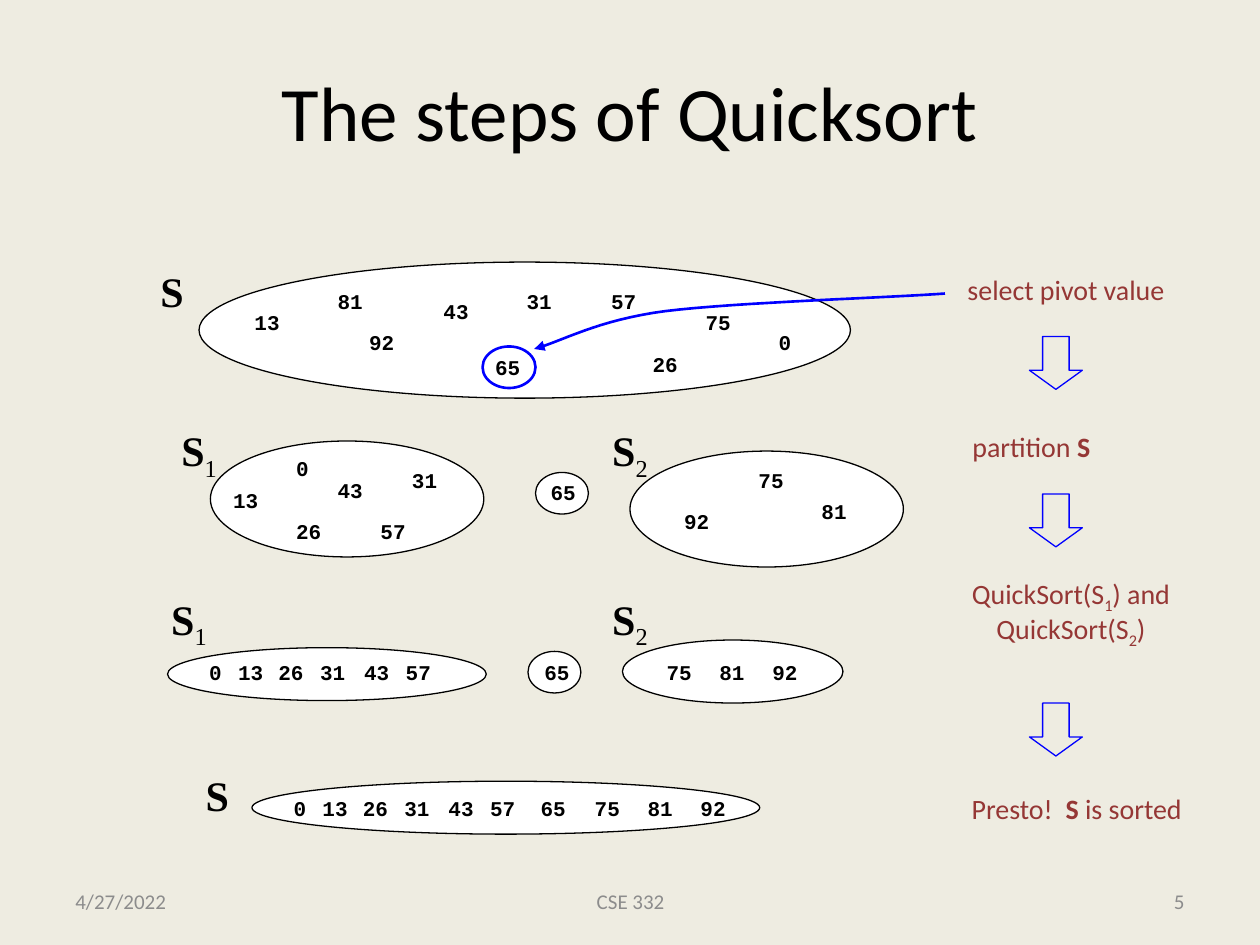
from lxml import etree
from pptx import Presentation
from pptx.dml.color import RGBColor
from pptx.enum.shapes import MSO_SHAPE
from pptx.enum.text import MSO_ANCHOR, MSO_AUTO_SIZE, PP_ALIGN
from pptx.oxml.ns import qn
from pptx.util import Inches, Pt

OVAL, DOWN = MSO_SHAPE.OVAL, MSO_SHAPE.DOWN_ARROW
LEFT, MID, RIGHT = PP_ALIGN.LEFT, PP_ALIGN.CENTER, PP_ALIGN.RIGHT
MIDDLE = MSO_ANCHOR.MIDDLE
GROW = MSO_AUTO_SIZE.SHAPE_TO_FIT_TEXT

PAPER = RGBColor(0xEE, 0xEC, 0xE1)
WHITE = RGBColor(0xFF, 0xFF, 0xFF)
BLACK = RGBColor(0x00, 0x00, 0x00)
BLUE = RGBColor(0x00, 0x00, 0xFF)
RED = RGBColor(0x95, 0x37, 0x35)
GRAY = RGBColor(0x8C, 0x8C, 0x8C)


def write(frame, text, font="Calibri", size=16, color=BLACK, bold=False,
          align=MID, space=None):
    """Fill a frame; | parts runs, a leading _ is subscript, a leading * bold."""
    frame.vertical_anchor = MIDDLE
    for i, line in enumerate(text.split("\n")):
        para = frame.add_paragraph() if i else frame.paragraphs[0]
        para.alignment = align
        para.line_spacing = space
        for part in line.split("|"):
            run = para.add_run()
            run.text = part.lstrip("_*")
            sub = part.startswith("_")
            run.font.name, run.font.size = font, Pt(size)
            run.font.color.rgb = color
            run.font.bold = part.startswith("*") or (bold and not sub)
            if sub:
                run._r.get_or_add_rPr().set("baseline", "-25000")


class Board:
    def __init__(self, slide):
        self.slide = slide
        self.shapes = slide.shapes
        slide.background.fill.solid()
        slide.background.fill.fore_color.rgb = PAPER

    def title(self, text, *box):
        shape = self.shapes.title
        shape.left, shape.top, shape.width, shape.height = map(Inches, box)
        write(shape.text_frame, text, size=44)

    def style(self, shape, fill, color, width):
        shape.shadow.inherit = False
        if fill is None:
            shape.fill.background()
        else:
            shape.fill.solid()
            shape.fill.fore_color.rgb = fill
        shape.line.color.rgb = color
        shape.line.width = Pt(width)

    def oval(self, *box, fill=WHITE, color=BLACK, width=0.75):
        shape = self.shapes.add_shape(OVAL, *map(Inches, box))
        self.style(shape, fill, color, width)

    def arrow(self, x, y):
        shape = self.shapes.add_shape(DOWN, *map(Inches, (x, y, 0.42, 0.42)))
        shape.adjustments[0], shape.adjustments[1] = 0.5, 0.36
        self.style(shape, None, BLUE, 0.75)

    def curve(self, start, *bends, steps=16):
        """Trace cubic bends from start and end in an arrowhead."""
        spots, last = [], start
        for bend in bends:
            ends = (last, *bend)
            for i in range(1, steps + 1):
                t = i / steps
                u = 1 - t
                mix = (u ** 3, 3 * u * u * t, 3 * u * t * t, t ** 3)
                spots.append([Inches(sum(m * p[k] for m, p in zip(mix, ends)))
                              for k in (0, 1)])
            last = bend[-1]
        path = self.shapes.build_freeform(*map(Inches, start))
        path.add_line_segments(spots, close=False)
        shape = path.convert_to_shape()
        self.style(shape, None, BLUE, 1.5)
        line = shape.line._get_or_add_ln()
        etree.SubElement(line, qn("a:tailEnd"), type="triangle")

    def text(self, text, *box, grow=True, **form):
        frame = self.shapes.add_textbox(*map(Inches, box)).text_frame
        frame.word_wrap = not grow
        if grow:
            frame.auto_size = GROW
            form["space"] = 0.9
        write(frame, text, **form)

    def number(self, value, x, y):
        text = str(value)
        self.text(text, x, y, 0.2 + 0.1 * len(text), 0.3,
                  font="Courier New", size=12, bold=True)

    def label(self, text, x, y):
        self.text(text, x, y, 0.5 if "_" in text else 0.39, 0.5,
                  font="Times New Roman", size=24, bold=True)


def main():
    deck = Presentation()
    deck.slide_width, deck.slide_height = Inches(10), Inches(7.5)
    board = Board(deck.slides.add_slide(deck.slide_layouts[5]))
    board.title("The steps of Quicksort", 0.5, 0.25, 9, 1.25)

    # Sets
    for box in ((1.58, 2.08, 5.17, 1.08),
                (1.67, 3.5, 2.17, 0.92), (4.25, 3.75, 0.42, 0.33),
                (5, 3.58, 2.17, 0.92),
                (1.33, 5.14, 2.53, 0.42), (4.19, 5.17, 0.42, 0.33),
                (4.94, 5.08, 1.75, 0.5),
                (2, 6.2, 4.03, 0.42)):
        board.oval(*box)

    # Scattered numbers
    for spot in ((13, 1.92, 2.42), (81, 2.58, 2.25), (92, 2.83, 2.58),
                 (43, 3.42, 2.33), (65, 3.83, 2.78), (31, 4.08, 2.25),
                 (57, 4.75, 2.25), (26, 5.08, 2.75), (75, 5.5, 2.42),
                 (0, 6.08, 2.58),
                 (13, 1.75, 3.83), (0, 2.25, 3.58), (26, 2.25, 4.08),
                 (43, 2.58, 3.75), (57, 2.92, 4.08), (31, 3.17, 3.67),
                 (65, 4.27, 3.77),
                 (92, 5.33, 4), (75, 5.92, 3.67), (81, 6.42, 3.92)):
        board.number(*spot)

    # Sorted numbers: low part, pivot, high part
    low = ((0, 0), (13, 0.23), (26, 0.55), (31, 0.88), (43, 1.23), (57, 1.56))
    for left, pivot, high, y in ((1.56, 4.22, 5.19, 5.2),
                                 (2.23, 4.19, 4.62, 6.28)):
        for value, gap in low:
            board.number(value, left + gap, y)
        board.number(65, pivot, y)
        for i, value in enumerate((75, 81, 92)):
            board.number(value, high + 0.42 * i, y)

    # Set names
    for name in (("S", 1.17, 2.08), ("S|_1", 1.33, 3.33), ("S|_2", 4.75, 3.33),
                 ("S|_1", 1.25, 4.67), ("S|_2", 4.75, 4.67), ("S", 1.53, 6.08)):
        board.label(*name)

    # Pivot mark and its pointer
    board.oval(3.83, 2.75, 0.42, 0.33, fill=None, color=BLUE, width=1.5)
    board.curve((7.5, 2.33),
                ((7.13, 2.36), (5.83, 2.4), (5.28, 2.47)),
                ((4.74, 2.54), (4.46, 2.71), (4.24, 2.77)))

    # Steps
    for step in (("select pivot value", 7.57, 2.14, 1.78, 0.34),
                 ("partition |*S", 7.61, 3.39, 1.15, 0.34),
                 ("QuickSort(S|_1|) and\nQuickSort(S|_2|)", 7.6, 4.56, 1.8, 0.59),
                 ("Presto!  |*S| is sorted", 7.6, 6.26, 1.89, 0.34)):
        board.text(*step, color=RED)
    for y in (2.67, 3.92, 5.58):
        board.arrow(8.17, y)

    # Footer
    for text, x, width, align in (("4/27/2022", 0.5, 2.33, LEFT),
                                  ("CSE 332", 3.42, 3.17, MID),
                                  ("5", 7.17, 2.33, RIGHT)):
        board.text(text, x, 6.95, width, 0.4, grow=False,
                   size=12, color=GRAY, align=align)

    deck.save("out.pptx")


if __name__ == "__main__":
    main()
